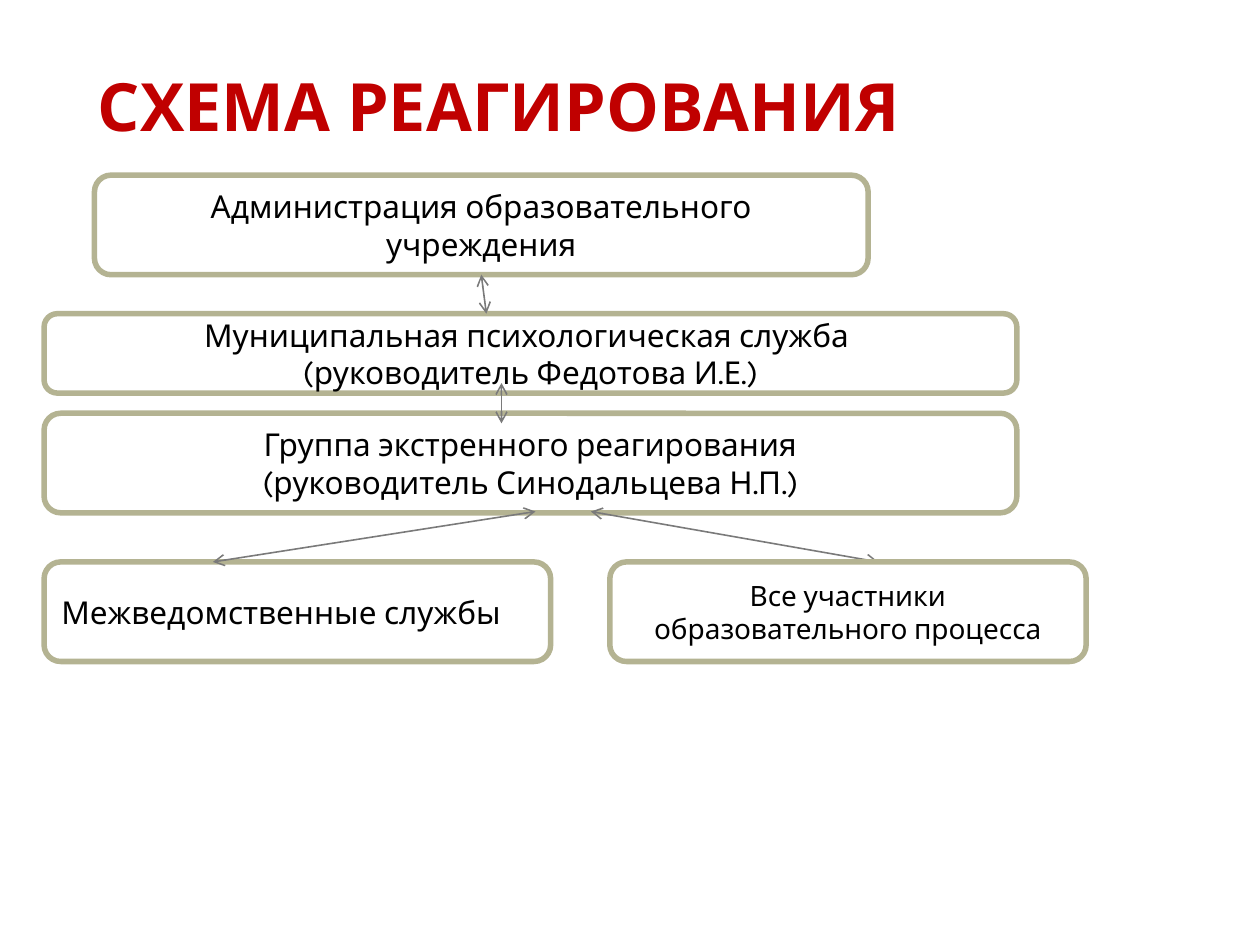
from lxml import etree
from pptx import Presentation
from pptx.dml.color import RGBColor
from pptx.enum.shapes import MSO_CONNECTOR, MSO_SHAPE
from pptx.enum.text import MSO_ANCHOR, PP_ALIGN
from pptx.oxml.ns import qn
from pptx.util import Inches, Pt

RED = RGBColor(0xC0, 0x00, 0x00)
BLACK = RGBColor(0x00, 0x00, 0x00)
WHITE = RGBColor(0xFF, 0xFF, 0xFF)
OLIVE = RGBColor(0xB4, 0xB3, 0x92)
GRAY = RGBColor(0x7A, 0x7A, 0x7A)
FONT = "Karla"
LEFT, CENTER = PP_ALIGN.LEFT, PP_ALIGN.CENTER
MIDDLE, BOTTOM = MSO_ANCHOR.MIDDLE, MSO_ANCHOR.BOTTOM
ROUNDED = MSO_SHAPE.ROUNDED_RECTANGLE
STRAIGHT = MSO_CONNECTOR.STRAIGHT
BOTTOM_SIDE = 2

BOX_LEFT = 0.35
WIDE = 7.72
BOX_HEIGHT = 0.79
SERVICES_TOP = 4.46
GROUP_BOTTOM = 4.06


def write_text(shape, lines, size=18, color=BLACK, bold=False,
               align=CENTER, anchor=MIDDLE):
    frame = shape.text_frame
    frame.word_wrap = True
    frame.vertical_anchor = anchor
    for index, line in enumerate(lines):
        para = frame.paragraphs[0] if index == 0 else frame.add_paragraph()
        para.alignment = align
        span = para.add_run()
        span.text = line
        span.font.name = FONT
        span.font.size = Pt(size)
        span.font.bold = bold
        span.font.color.rgb = color


def add_title(page, text):
    box = page.shapes.add_textbox(Inches(0), Inches(0.35), Inches(7.92), Inches(0.8))
    frame = box.text_frame
    frame.margin_left = frame.margin_right = Inches(0.05)
    frame.margin_top = frame.margin_bottom = Inches(0)
    write_text(box, [text], size=38, color=RED, bold=True, anchor=BOTTOM)


def add_box(page, left, top, width, height, lines, **text_format):
    box = page.shapes.add_shape(ROUNDED, Inches(left), Inches(top),
                                Inches(width), Inches(height))
    box.shadow.inherit = False
    box.fill.solid()
    box.fill.fore_color.rgb = WHITE
    box.line.color.rgb = OLIVE
    box.line.width = Pt(3.15)
    write_text(box, lines, **text_format)
    return box


def add_double_arrow(page, start, end):
    arrow = page.shapes.add_connector(STRAIGHT, *map(Inches, start + end))
    arrow.line.color.rgb = GRAY
    arrow.line.width = Pt(0.9)
    outline = arrow.line._get_or_add_ln()
    for tag in ("a:headEnd", "a:tailEnd"):
        etree.SubElement(outline, qn(tag), type="arrow")
    etree.SubElement(arrow._element.spPr, qn("a:effectLst"))
    return arrow


def main():
    deck = Presentation()
    deck.slide_width, deck.slide_height = Inches(10), Inches(7.5)
    page = deck.slides.add_slide(deck.slide_layouts[6])

    add_title(page, "СХЕМА РЕАГИРОВАНИЯ")
    add_box(page, BOX_LEFT, 2.49, WIDE, 0.63,
            ["Муниципальная психологическая служба ", "(руководитель Федотова И.Е.)"])
    administration = add_box(page, 0.75, 1.39, 6.14, BOX_HEIGHT,
                             ["Администрация образовательного", "учреждения"])
    add_box(page, BOX_LEFT, SERVICES_TOP, 4.02, BOX_HEIGHT,
            ["Межведомственные службы"], align=LEFT)
    add_box(page, BOX_LEFT, 3.28, WIDE, BOX_HEIGHT,
            ["Группа экстренного реагирования", "(руководитель Синодальцева Н.П.)"])

    administration_arrow = add_double_arrow(page, (3.86, 2.49), (3.82, 2.18))
    administration_arrow.end_connect(administration, BOTTOM_SIDE)
    # The participants box covers the tip of this arrow.
    add_double_arrow(page, (4.69, GROUP_BOTTOM), (6.97, SERVICES_TOP))
    add_box(page, 4.84, SERVICES_TOP, 3.78, BOX_HEIGHT,
            ["Все участники образовательного процесса"], size=16)
    add_double_arrow(page, (1.69, SERVICES_TOP), (4.25, GROUP_BOTTOM))
    add_double_arrow(page, (3.98, 3.36), (3.98, 3.04))

    deck.save("out.pptx")


if __name__ == "__main__":
    main()
